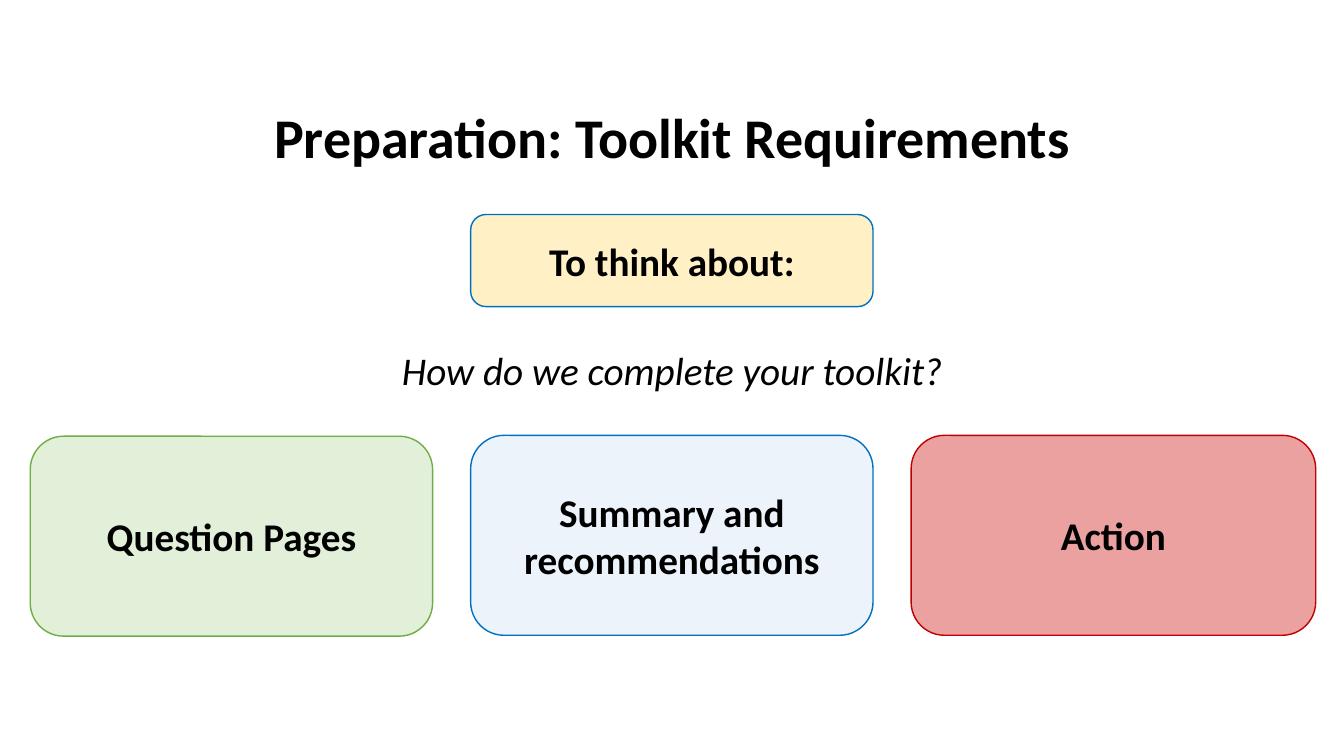
from pptx import Presentation
from pptx.dml.color import RGBColor
from pptx.enum.shapes import MSO_SHAPE as Shape
from pptx.enum.text import MSO_ANCHOR as Anchor, PP_ALIGN as Align
from pptx.oxml.ns import qn
from pptx.util import Pt
from lxml import etree

COLORS = {
    "text": "000000",
    "blue": "0070C0",
    "green": "70AD47",
    "red": "C00000",
    "cream": "FFE699",
    "pale_blue": "DEEBF7",
    "pale_green": "E2F0D9",
    "rose": "DB5857",
}


class SlideBuilder:
    font = "Calibri"
    body_size = 28

    def __init__(self, page):
        self.page = page

    def color(self, name):
        return RGBColor.from_string(COLORS[name])

    def add_text(self, box, text, size, anchor, bold=False, italic=False, spacing=1.0):
        frame = box.text_frame
        frame.word_wrap = True
        frame.vertical_anchor = anchor
        para = frame.paragraphs[0]
        para.alignment = Align.CENTER
        para.line_spacing = spacing
        span = para.add_run()
        span.text = text
        span.font.name = self.font
        span.font.size = Pt(size)
        span.font.bold = bold
        span.font.italic = italic
        span.font.color.rgb = self.color("text")

    def label(self, bounds, text, size=body_size, anchor=Anchor.TOP, **style):
        box = self.page.shapes.add_textbox(*map(Pt, bounds))
        self.add_text(box, text, size, anchor, **style)

    def card(self, bounds, text, fill, line, opacity=100):
        box = self.page.shapes.add_shape(Shape.ROUNDED_RECTANGLE, *map(Pt, bounds))
        box.shadow.inherit = False
        box.fill.solid()
        box.fill.fore_color.rgb = self.color(fill)
        if opacity < 100:
            tint = box.element.spPr.find(qn("a:solidFill"))[0]
            etree.SubElement(tint, qn("a:alpha"), val=str(opacity * 1000))
        box.line.color.rgb = self.color(line)
        box.line.width = Pt(1)
        self.add_text(box, text, self.body_size, Anchor.MIDDLE, bold=True)


def main():
    deck = Presentation()
    deck.slide_width, deck.slide_height = Pt(960), Pt(540)
    builder = SlideBuilder(deck.slides.add_slide(deck.slide_layouts[6]))

    # Title
    builder.label((66, 48, 828, 104.4), "Preparation: Toolkit Requirements",
                  size=40, anchor=Anchor.MIDDLE, bold=True, spacing=0.9)

    # Column grid
    left, pitch, width = 21.6, 314.6, 287.4

    # Prompt and question
    builder.card((left + pitch, 153.2, width, 65.8), "To think about:",
                 "cream", "blue", opacity=56)
    builder.label((165.5, 244.1, 629.3, 41.2), "How do we complete your toolkit?",
                  italic=True)

    # Toolkit parts
    parts = [
        ("Question Pages", "pale_green", "green", 100, 311.6, width),
        ("Summary and recommendations", "pale_blue", "blue", 56, 311, width),
        ("Action", "rose", "red", 56, 311, 289),
    ]
    for column, (text, fill, line, opacity, top, card_width) in enumerate(parts):
        builder.card((left + column * pitch, top, card_width, 142.8),
                     text, fill, line, opacity)

    deck.save("out.pptx")


if __name__ == "__main__":
    main()
